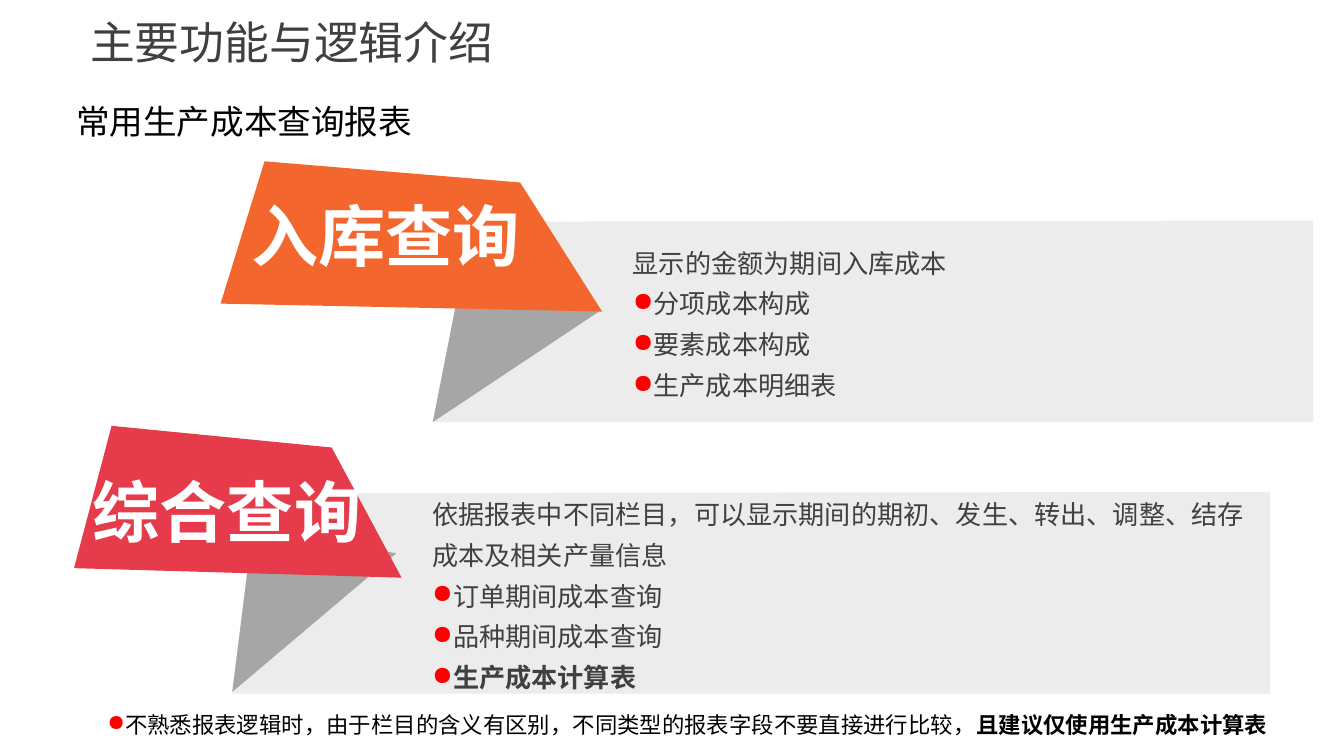
from lxml import etree
from pptx import Presentation
from pptx.dml.color import RGBColor
from pptx.enum import text as t
from pptx.oxml.ns import qn
from pptx.util import Cm, Pt

SANS = "Noto Sans CJK SC"
DARK, BLACK, WHITE, RED = "404040", "000000", "FFFFFF", "FF0000"
PANEL, FOLD = "D9D9D9", "A6A6A6"
LABEL_INSETS = (0.18, 0.1)

TITLE = "主要功能与逻辑介绍"
SUBTITLE = "常用生产成本查询报表"
NOTE = [("不熟悉报表逻辑时，由于栏目的含义有区别，不同类型的报表字段不要直接进行比较，", False),
        ("且建议仅使用生产成本计算表", True)]
QUERIES = [
    {
        "label": "入库查询", "label_at": (4.57, 3.58, 5.51, 1.73), "color": "F3662D",
        "panel": [(9.45, 4.19), (24.82, 4.17), (24.82, 7.98), (8.18, 7.98)],
        "fold": [(11.35, 5.87), (8.74, 5.13), (8.18, 7.98)],
        "flag": [(5, 3.05), (9.83, 3.45), (11.38, 5.89), (4.17, 5.74)],
        "intro": "显示的金额为期间入库成本",
        "reports": [("分项成本构成", False), ("要素成本构成", False), ("生产成本明细表", False)],
        "text_at": (11.71, 4.37, 12.29, 3.38),
    },
    {
        "label": "综合查询", "label_at": (1.57, 8.79, 5.51, 1.73), "color": "E53B4A",
        "panel": [(5.87, 9.32), (24, 9.3), (24, 13.11), (4.37, 13.11)],
        "fold": [(7.49, 10.46), (4.78, 9.96), (4.39, 13.08)],
        "flag": [(2.11, 8.05), (6.27, 8.46), (7.59, 10.92), (1.4, 10.74)],
        "intro": "依据报表中不同栏目，可以显示期间的期初、发生、转出、调整、结存成本及相关产量信息",
        "reports": [("订单期间成本查询", False), ("品种期间成本查询", False), ("生产成本计算表", True)],
        "text_at": (7.92, 9.12, 16.08, 4.14),
    },
]


def rgb(value):
    return RGBColor.from_string(value)


def place(shape, at):
    shape.left, shape.top, shape.width, shape.height = map(Cm, at)


def style(para, font, size, color, bold=False):
    para.font.name, para.font.size, para.font.bold = font, Pt(size), bold
    para.font.color.rgb = rgb(color)


def add_polygon(slide, points, color, opacity=100):
    corners = [(Cm(x), Cm(y)) for x, y in points]
    builder = slide.shapes.build_freeform(*corners[0])
    builder.add_line_segments(corners[1:], close=True)
    shape = builder.convert_to_shape()
    shape.shadow.inherit = False
    shape.line.fill.background()
    shape.fill.solid()
    shape.fill.fore_color.rgb = rgb(color)
    if opacity < 100:
        tint = shape.fill._xPr.find(f".//{qn('a:srgbClr')}")
        etree.SubElement(tint, qn("a:alpha"), val=str(opacity * 1000))


def add_bullet(para):
    props = para._p.get_or_add_pPr()
    props.set("marL", "0")
    props.set("indent", "0")
    tint = etree.SubElement(props, qn("a:buClr"))
    etree.SubElement(tint, qn("a:srgbClr"), val=RED)
    etree.SubElement(props, qn("a:buChar"), char="●")


def add_text(slide, at, paragraphs, font, size, color, spacing=1.0, wrap=True):
    box = slide.shapes.add_textbox(*map(Cm, at))
    frame = box.text_frame
    frame.word_wrap = wrap
    for index, (spans, bulleted) in enumerate(paragraphs):
        para = frame.add_paragraph() if index else frame.paragraphs[0]
        if bulleted:
            add_bullet(para)
        para.line_spacing = spacing
        same_weight = len({bold for _, bold in spans}) == 1
        style(para, font, size, color, same_weight and spans[0][1])
        for words, bold in spans:
            span = para.add_run()
            span.text = words
            if not same_weight:
                span.font.bold = bold
    return frame


def main():
    deck = Presentation()
    deck.slide_width, deck.slide_height = Cm(25.4), Cm(14.29)
    slide = deck.slides.add_slide(deck.slide_layouts[5])

    title = slide.shapes.title
    place(title, (1.45, 0.08, 22.86, 1.4))
    title.text_frame.text = TITLE
    title.text_frame.vertical_anchor = t.MSO_ANCHOR.MIDDLE
    heading = title.text_frame.paragraphs[0]
    heading.alignment = t.PP_ALIGN.LEFT
    style(heading, SANS, 24, DARK)

    for query in QUERIES:
        add_polygon(slide, query["panel"], PANEL, opacity=49)
        add_polygon(slide, query["fold"], FOLD)
        add_polygon(slide, query["flag"], query["color"])
        label = add_text(slide, query["label_at"], [([(query["label"], True)], False)],
                         "Arial", 36, WHITE, wrap=False)
        label.margin_left = label.margin_right = Cm(LABEL_INSETS[0])
        label.margin_top = label.margin_bottom = Cm(LABEL_INSETS[1])
        lines = [([(query["intro"], False)], False)]
        lines += [([report], True) for report in query["reports"]]
        add_text(slide, query["text_at"], lines, SANS, 14, DARK, spacing=1.3)

    add_text(slide, (1.19, 1.78, 15.09, 1.02), [([(SUBTITLE, False)], False)], "Calibri", 18, BLACK)
    add_text(slide, (1.78, 13.06, 22.63, 0.94), [(NOTE, True)], "Calibri", 12, BLACK, spacing=1.5)
    deck.save("out.pptx")


if __name__ == "__main__":
    main()
